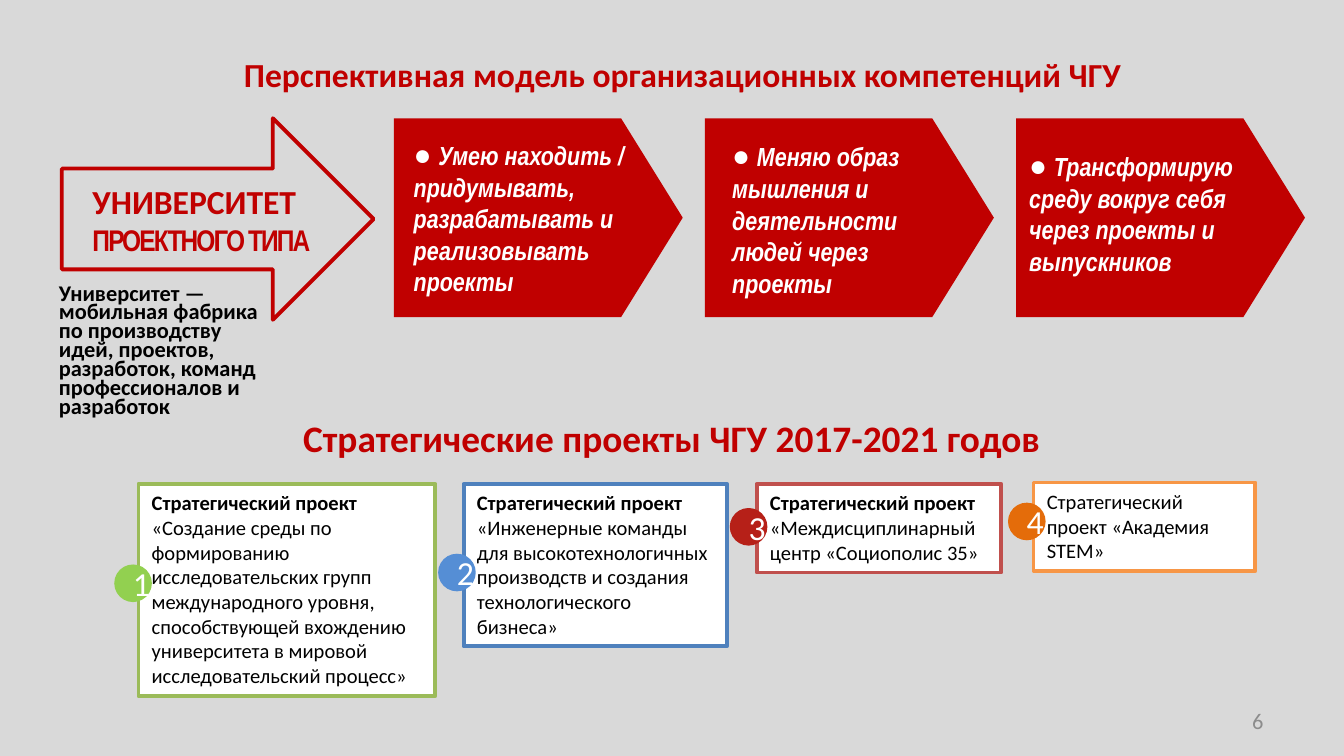
from pptx import Presentation
from pptx.dml.color import RGBColor
from pptx.enum.shapes import MSO_SHAPE
from pptx.enum.text import MSO_ANCHOR, MSO_AUTO_SIZE, PP_ALIGN
from pptx.util import Inches, Pt

COLORS = {
    "background": "D9D9D9", "red": "C00000", "white": "FFFFFF", "black": "000000",
    "gray": "8C8C8C", "green": "9BBB59", "blue": "4F81BD", "brick": "C0504D",
    "orange": "F79646", "green dot": "92D050", "blue dot": "558ED5",
    "brick dot": "B62018", "orange dot": "E46C0A",
}

# Style: size, font, colour, bold, italic
STYLES = {
    "title": (18, "Calibri", "red", True, False),
    "subtitle": (20, "Calibri", "red", True, False),
    "type": (16, "Arial Narrow", "red", True, False),
    "bullet": (16, "Arial Narrow", "white", False, False),
    "skill": (14, "Arial Narrow", "white", True, True),
    "mission": (12, "Calibri", "black", True, False),
    "project": (11, "Calibri", "black", False, False),
    "project label": (11, "Calibri", "black", True, False),
    "number": (18, "Calibri", "white", False, False),
    "page number": (12, "Calibri", "gray", False, False),
}

# Each paragraph is a list of (text, style) runs
UNIVERSITY = [[("УНИВЕРСИТЕТ", "title")], [("ПРОЕКТНОГО ТИПА", "type")]]
MISSION = [[("Университет — мобильная фабрика по производству идей, проектов, "
             "разработок, команд профессионалов и разработок", "mission")]]
TITLE = [[("Перспективная модель организационных компетенций ЧГУ", "title")]]
SUBTITLE = [[("Стратегические проекты ЧГУ 2017-2021 годов", "subtitle")]]

# Text position, then paragraphs
SKILLS = [
    ((2.98, 0.96, 2.23, 1.31), ["Умею находить /",
                                "придумывать, разрабатывать и реализовывать проекты"]),
    ((5.35, 0.97, 1.73, 1.31), ["Меняю образ мышления и деятельности людей через проекты"]),
    ((7.56, 1.04, 2.13, 1.08), ["Трансформирую среду вокруг себя через проекты и выпускников"]),
]

# Card position, dot left and top, colour, runs
LABEL = "Стратегический проект "
PROJECTS = [
    ((1.03, 3.6, 2.21, 1.58), (0.85, 4.2), "green", [
        (LABEL, "project label"),
        ("«Создание среды по формированию исследовательских групп международного уровня, "
         "способствующей вхождению университета в мировой исследовательский процесс»",
         "project")]),
    ((3.45, 3.6, 1.96, 1.21), (3.26, 4.12), "blue", [
        (LABEL, "project label"),
        ("«Инженерные команды для высокотехнологичных производств и создания "
         "технологического бизнеса»", "project")]),
    ((5.63, 3.6, 1.82, 0.66), (5.43, 3.78), "brick", [
        (LABEL, "project label"),
        ("«Междисциплинарный центр «Социополис 35»", "project")]),
    ((7.69, 3.59, 1.65, 0.66), (7.5, 3.74), "orange", [
        (LABEL + "«Академия STEM»", "project")]),
]
DOT_SIZE = 0.28
PLATE_LEFT, PLATE_STEP = 2.93, 2.315


def color(name):
    return RGBColor.from_string(COLORS[name])


def write(shape, paragraphs, align=PP_ALIGN.LEFT, anchor=MSO_ANCHOR.TOP, grow=True):
    frame = shape.text_frame
    frame.word_wrap = True
    frame.vertical_anchor = anchor
    frame.auto_size = MSO_AUTO_SIZE.SHAPE_TO_FIT_TEXT if grow else MSO_AUTO_SIZE.NONE
    for index, runs in enumerate(paragraphs):
        para = frame.add_paragraph() if index else frame.paragraphs[0]
        para.alignment = align
        for text, style in runs:
            span = para.add_run()
            span.text = text
            size, font, fill, bold, italic = STYLES[style]
            span.font.size = Pt(size)
            span.font.name = font
            span.font.color.rgb = color(fill)
            span.font.bold = bold
            span.font.italic = italic
            if style == "type":
                span.font._element.set("spc", "-100")  # one point tighter


def add_text(page, place, paragraphs, **options):
    box = page.shapes.add_textbox(*map(Inches, place))
    write(box, paragraphs, **options)
    return box


def add_figure(page, kind, place, fill=None, line=None):
    shape = page.shapes.add_shape(kind, *map(Inches, place))
    shape.shadow.inherit = False
    if fill:
        shape.fill.solid()
        shape.fill.fore_color.rgb = color(fill)
    else:
        shape.fill.background()
    if line:
        shape.line.color.rgb = color(line)
        shape.line.width = Pt(2)
    else:
        shape.line.fill.background()
    return shape


def main():
    deck = Presentation()
    deck.slide_width = Inches(10)
    deck.slide_height = deck.slide_width * 9 // 16
    page = deck.slides.add_slide(deck.slide_layouts[6])
    page.background.fill.solid()
    page.background.fill.fore_color.rgb = color("background")

    for index in range(len(SKILLS)):
        left = PLATE_LEFT + index * PLATE_STEP
        plate = add_figure(page, MSO_SHAPE.PENTAGON, (left, 0.88, 2.15, 1.48), fill="red")
        plate.adjustments[0] = 0.31

    add_text(page, (0.59, 1.3, 2.2, 0.67), UNIVERSITY)
    add_figure(page, MSO_SHAPE.RIGHT_ARROW, (0.46, 0.88, 2.32, 1.5), line="red")

    for place, lines in SKILLS:
        paragraphs = [[(line, "skill")] for line in lines]
        paragraphs[0].insert(0, ("● ", "bullet"))
        add_text(page, place, paragraphs)

    add_text(page, (0.33, 0.35, 9.5, 0.4), TITLE, align=PP_ALIGN.CENTER)
    for number, (place, corner, hue, runs) in enumerate(PROJECTS, 1):
        card = add_figure(page, MSO_SHAPE.RECTANGLE, place, "white", hue)
        write(card, [runs])
        dot = add_figure(page, MSO_SHAPE.OVAL, (*corner, DOT_SIZE, DOT_SIZE), hue + " dot")
        write(dot, [[(str(number), "number")]], align=PP_ALIGN.CENTER,
              anchor=MSO_ANCHOR.MIDDLE, grow=False)

    add_text(page, (0.25, 3.04, 9.5, 0.44), SUBTITLE, align=PP_ALIGN.CENTER)
    mission = add_text(page, (0.34, 2.08, 1.73, 1.1), MISSION)
    mission.text_frame.paragraphs[0].line_spacing = 0.7
    add_text(page, (7.17, 5.21, 2.33, 0.3), [[("6", "page number")]],
             align=PP_ALIGN.RIGHT, anchor=MSO_ANCHOR.MIDDLE, grow=False)

    deck.save("out.pptx")


if __name__ == "__main__":
    main()
